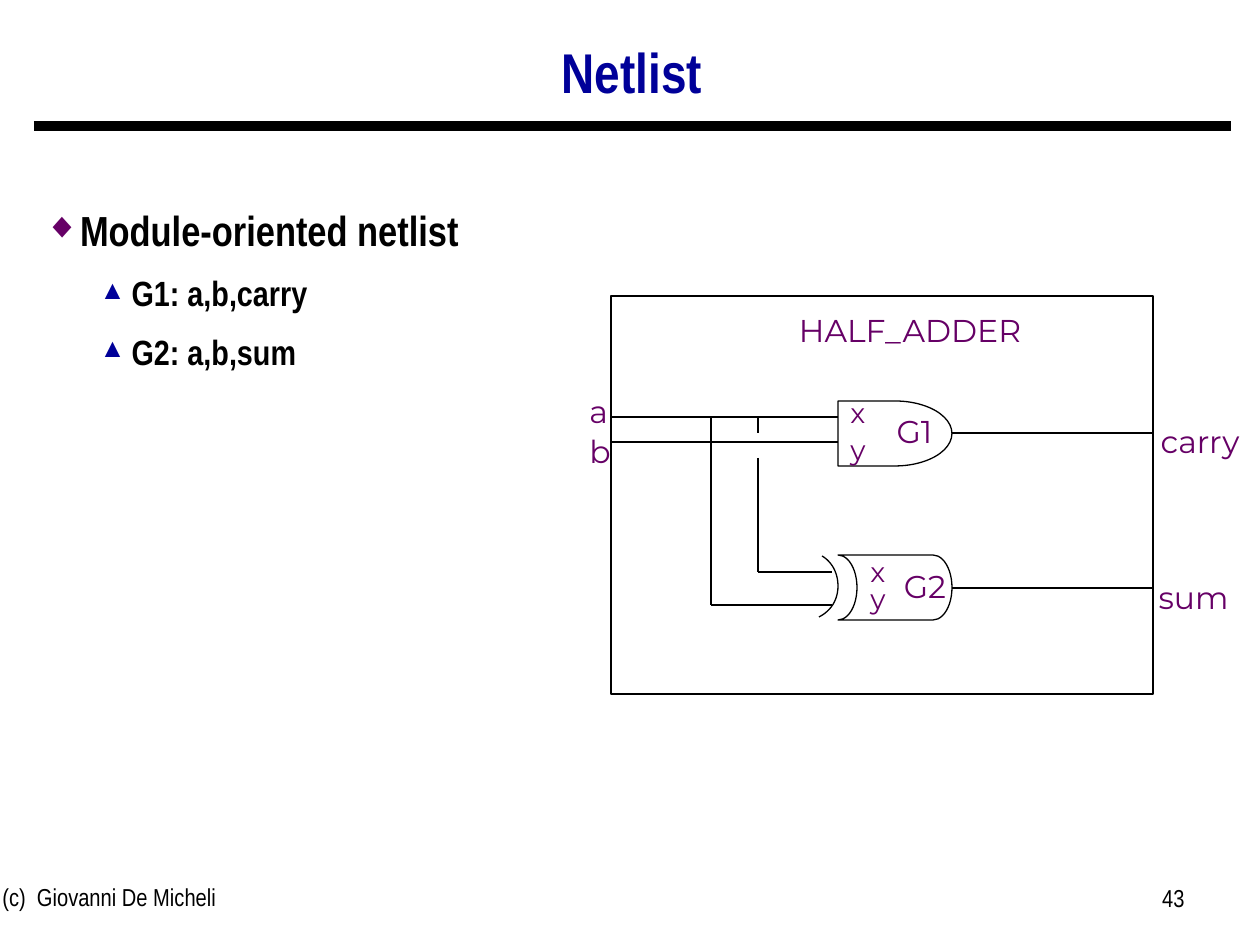
from lxml.etree import SubElement
from pptx import Presentation
from pptx.dml.color import RGBColor as RGB
from pptx.enum.shapes import MSO_CONNECTOR, MSO_SHAPE as SHAPE
from pptx.enum.text import MSO_ANCHOR as ANCHOR, MSO_AUTO_SIZE as FIT, PP_ALIGN as ALIGN
from pptx.oxml.ns import qn
from pptx.util import Pt

PX = 914400 / 126
BLACK, NAVY, PURPLE = RGB(0, 0, 0), RGB(0, 0, 0x99), RGB(0x66, 0, 0x66)
SANS, ROUND = "Arial Narrow", "Montserrat"
THEME = {
    "title": {"name": SANS, "size": Pt(32), "bold": True, "color": NAVY},
    "topic": {"name": SANS, "size": Pt(24), "bold": True, "color": BLACK},
    "gate": {"name": SANS, "size": Pt(20), "bold": True, "color": BLACK},
    "footer": {"name": SANS, "size": Pt(14), "color": BLACK},
    "signal": {"name": ROUND, "size": Pt(18), "color": PURPLE},
    "pin": {"name": ROUND, "size": Pt(16), "color": PURPLE},
}
THIN, THICK = Pt(0.75), Pt(6)


def px(*lengths):
    return [round(length * PX) for length in lengths]


def write(paragraph, text, role, **layout):
    """Add one run in a theme role, with paragraph settings such as alignment."""
    run = paragraph.add_run()
    run.text = text
    for key, value in THEME[role].items():
        if key == "color":
            run.font.color.rgb = value
        else:
            setattr(run.font, key, value)
    for key, value in layout.items():
        setattr(paragraph, key, value)


prs = Presentation()
prs.slide_width, prs.slide_height = px(1260, 945)
slide = prs.slides.add_slide(prs.slide_layouts[1])
shapes = slide.shapes

# Title and list
title, body = shapes.title, slide.placeholders[1]
for holder, box, anchor in (
    (title, (33, 28, 1198, 94), ANCHOR.MIDDLE),
    (body, (32, 186, 588, 717), ANCHOR.TOP),
):
    holder.left, holder.top, holder.width, holder.height = px(*box)
    holder.text_frame.auto_size = FIT.NONE
    holder.text_frame.vertical_anchor = anchor
write(title.text_frame.paragraphs[0], "Netlist", "title",
      alignment=ALIGN.CENTER, line_spacing=0.9)

# Per level: role, line spacing, text indent, hanging indent, bullet, colour, size in %
LEVELS = [
    ("topic", 1.25, 34, 34, "◆", PURPLE, 85),
    ("gate", 1.1, 87, 32, "▲", NAVY, 75),
]
netlist = [("Module-oriented netlist", 0), ("G1: a,b,carry", 1), ("G2: a,b,sum", 1)]
for i, (text, level) in enumerate(netlist):
    role, spacing, indent, hanging, bullet, color, percent = LEVELS[level]
    item = body.text_frame.paragraphs[0] if i == 0 else body.text_frame.add_paragraph()
    write(item, text, role, level=level, line_spacing=spacing, space_before=Pt(7))
    props = item._p.get_or_add_pPr()
    margin, hang = px(indent, hanging)
    props.set("marL", str(margin))
    props.set("indent", str(-hang))
    SubElement(SubElement(props, qn("a:buClr")), qn("a:srgbClr"), val=str(color))
    SubElement(props, qn("a:buSzPct"), val=str(percent * 1000))
    SubElement(props, qn("a:buFont"), typeface=SANS)
    SubElement(props, qn("a:buChar"), char=bullet)

# Module frame, AND gate and XOR gate
LEFT, RIGHT = 611, 1153
GATE_IN, GATE_OUT, GATE_HEIGHT = 838, 952, 65
AND_TOP, XOR_TOP = 401, 555
outlines = []
for preset, box, turn in (
    (SHAPE.RECTANGLE, (LEFT, 296, RIGHT - LEFT, 398), 0),
    (SHAPE.FLOWCHART_DELAY, (GATE_IN, AND_TOP, GATE_OUT - GATE_IN, GATE_HEIGHT), 0),
    (SHAPE.FLOWCHART_STORED_DATA, (GATE_IN, XOR_TOP, GATE_OUT - GATE_IN, GATE_HEIGHT), 180),
):
    outline = shapes.add_shape(preset, *px(*box))
    outline.rotation = turn
    outlines.append(outline)

# Input arc of the XOR gate, sampled from two Bézier curves
STEPS = 12
arc_points = []
for curve in (
    ((822, 556), (832, 562), (838, 573), (838, 586)),
    ((838, 586), (838, 600), (831, 611), (819, 617)),
):
    for step in range(STEPS + 1):
        t = step / STEPS
        weights = ((1 - t) ** 3, 3 * t * (1 - t) ** 2, 3 * t * t * (1 - t), t ** 3)
        arc_points.append(px(*(sum(w * p[axis] for w, p in zip(weights, curve))
                               for axis in (0, 1))))
arc = shapes.build_freeform(*arc_points[0])
arc.add_line_segments(arc_points[1:], close=False)
outlines.append(arc.convert_to_shape())

for outline in outlines:
    outline.shadow.inherit = False
    outline.fill.background()
    outline.line.color.rgb = BLACK
    outline.line.width = THIN

# Title rule and wires
A_Y, B_Y, CARRY_Y, SUM_Y = 417, 442, 433, 588
XOR_X_Y, XOR_Y_Y, XOR_IN = 572, 605, 832
A_TAP, B_TAP = 711, 758
lines = [
    (34, 126, 1231, 126, THICK),
    (LEFT, A_Y, GATE_IN, A_Y, THIN),
    (LEFT, B_Y, GATE_IN, B_Y, THIN),
    (A_TAP, A_Y, A_TAP, XOR_Y_Y, THIN),
    (A_TAP, XOR_Y_Y, XOR_IN, XOR_Y_Y, THIN),
    (B_TAP, A_Y, B_TAP, CARRY_Y, THIN),
    (B_TAP, 458, B_TAP, XOR_X_Y, THIN),
    (B_TAP, XOR_X_Y, XOR_IN, XOR_X_Y, THIN),
    (GATE_OUT, CARRY_Y, RIGHT, CARRY_Y, THIN),
    (GATE_OUT, SUM_Y, RIGHT, SUM_Y, THIN),
]
for *ends, width in lines:
    line = shapes.add_connector(MSO_CONNECTOR.STRAIGHT, *px(*ends))
    line.line.color.rgb = BLACK
    line.line.width = width
    SubElement(line._element.spPr, qn("a:effectLst"))

# Signal names, pin names and footer
labels = [
    ("HALF_ADDER", "signal", (767, 305, 286, 57), ALIGN.CENTER),
    ("a", "signal", (577, 386, 26, 57), ALIGN.CENTER),
    ("b", "signal", (577, 426, 26, 57), ALIGN.CENTER),
    ("carry", "signal", (1140, 416, 120, 57), ALIGN.CENTER),
    ("sum", "signal", (1140, 572, 107, 57), ALIGN.CENTER),
    ("G1", "signal", (876, 406, 77, 57), ALIGN.CENTER),
    ("G2", "signal", (874, 561, 102, 57), ALIGN.CENTER),
    ("x", "pin", (838, 389, 26, 52), ALIGN.CENTER),
    ("y", "pin", (838, 426, 26, 52), ALIGN.CENTER),
    ("x", "pin", (858, 548, 26, 52), ALIGN.CENTER),
    ("y", "pin", (858, 575, 26, 52), ALIGN.CENTER),
    ("(c)  Giovanni De Micheli", "footer", (-10, 876, 399, 66), ALIGN.LEFT),
    ("43", "footer", (903, 877, 294, 66), ALIGN.RIGHT),
]
for text, role, box, alignment in labels:
    label = shapes.add_textbox(*px(*box)).text_frame
    label.word_wrap = True
    write(label.paragraphs[0], text, role, alignment=alignment)

prs.save("out.pptx")
